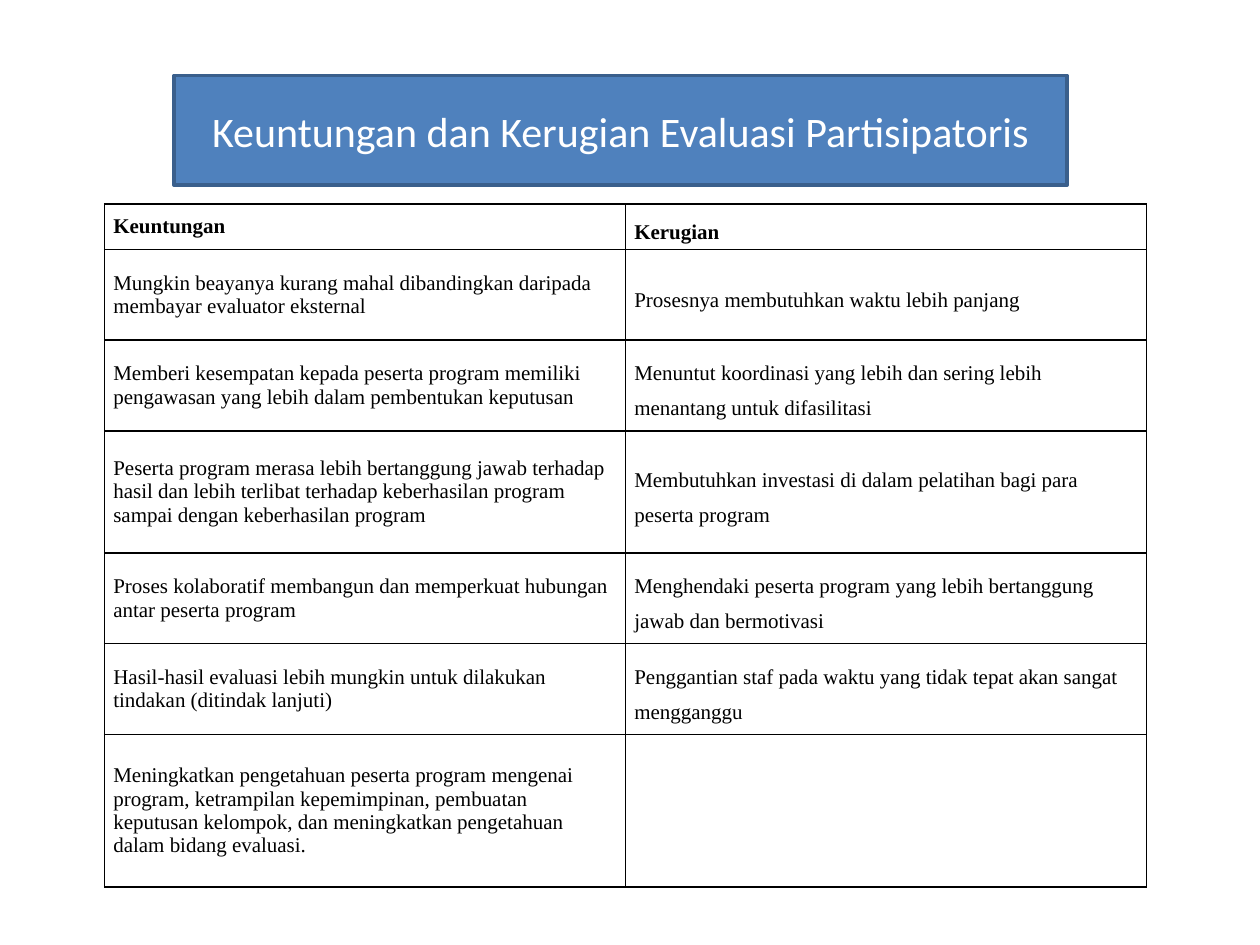
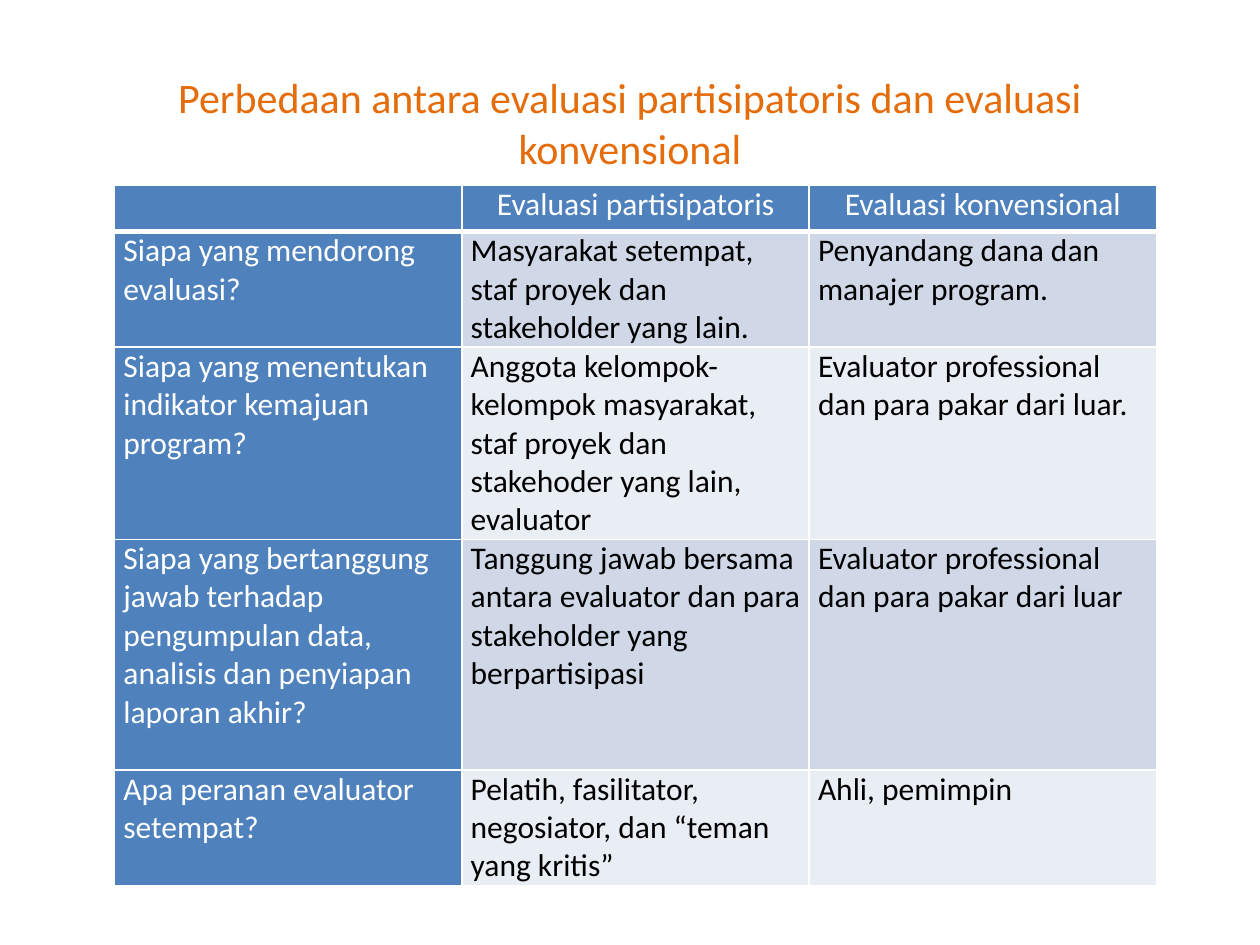
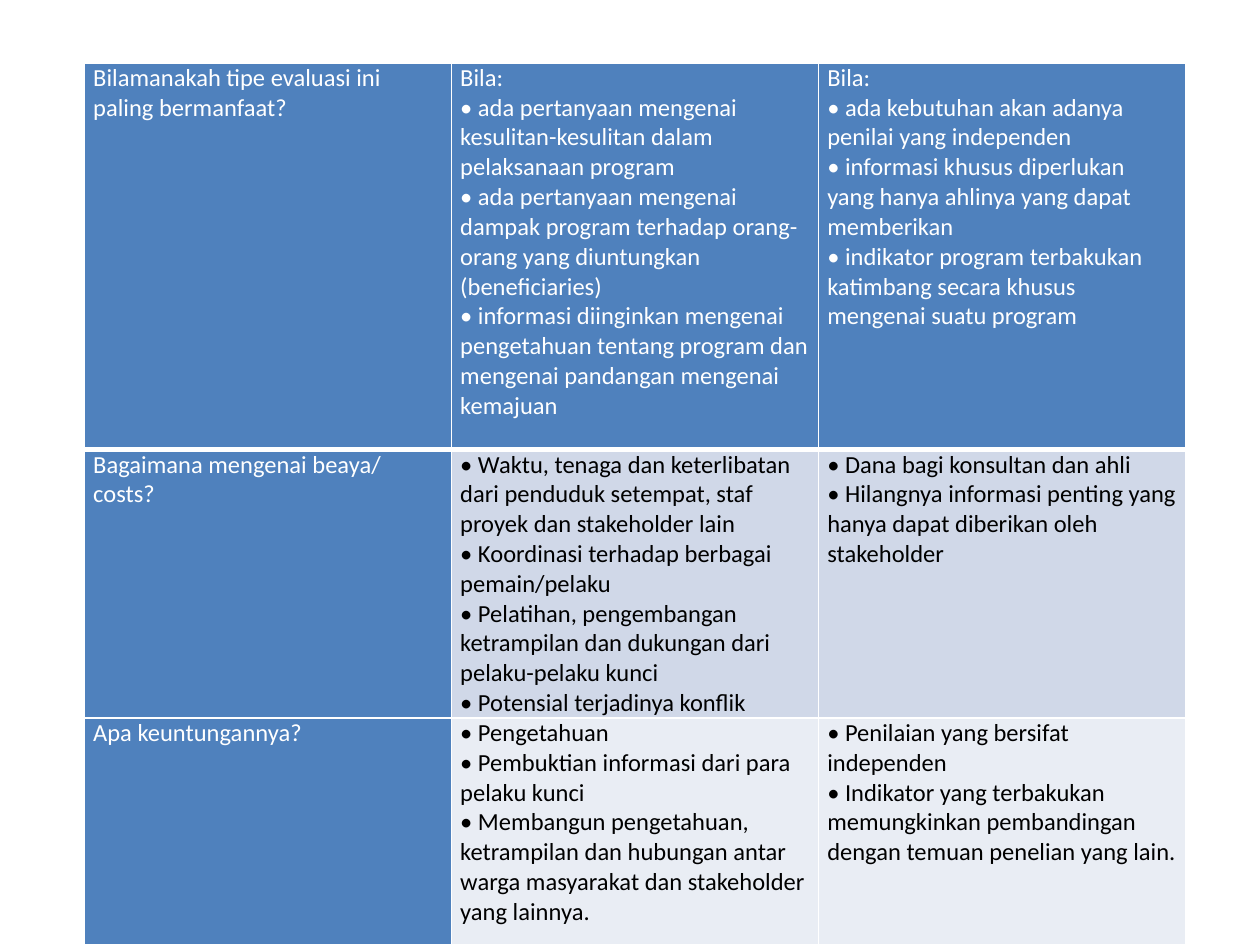
"""Build three slides that compare participatory and conventional evaluation."""
from dataclasses import dataclass

from lxml import etree
from pptx import Presentation
from pptx.dml.color import RGBColor
from pptx.enum.text import MSO_ANCHOR, MSO_AUTO_SIZE, PP_ALIGN
from pptx.oxml.ns import qn
from pptx.util import Inches, Pt

LEFT, CENTER, JUSTIFY = PP_ALIGN.LEFT, PP_ALIGN.CENTER, PP_ALIGN.JUSTIFY
TOP, MIDDLE = MSO_ANCHOR.TOP, MSO_ANCHOR.MIDDLE
NO_FIT = MSO_AUTO_SIZE.NONE
TITLE_ONLY, BLANK = 5, 6


@dataclass(frozen=True)
class Theme:
    """Colours, fonts and sizes shared by the slides."""
    blue: str = "4F81BD"
    blue_edge: str = "3A5F8C"
    orange: str = "E46C0A"
    white: str = "FFFFFF"
    black: str = "000000"
    bands: tuple = ("D0D8E8", "E9EDF4")
    sans: str = "Calibri"
    serif: str = "Times New Roman"
    title_size: int = 24
    list_size: int = 12
    matrix_size: int = 18
    detail_size: int = 14
    thin: int = 1
    thick: int = 3
    cell_margin: float = 0.07


class Deck:
    """Hold the style and the current slide."""

    def __init__(self, theme):
        self.theme = theme
        self.show = Presentation()
        self.show.slide_width, self.show.slide_height = Inches(10), Inches(7.5)
        self.page = None

    def add_page(self, layout):
        """Start a new slide."""
        self.page = self.show.slides.add_slide(self.show.slide_layouts[layout])

    def add_text(self, frame, text, font, size, color, align=LEFT, bold=False, spacing=1.0):
        """Add one paragraph for each line of text."""
        for number, line in enumerate(text.splitlines()):
            para = frame.add_paragraph() if number else frame.paragraphs[0]
            para.alignment, para.line_spacing = align, spacing
            span = para.add_run()
            span.text = line
            span.font.name, span.font.size, span.font.bold = font, Pt(size), bold
            span.font.color.rgb = RGBColor.from_string(color)

    def title(self, text, place, color, anchor, fill=None):
        """Move and format the title, with a filled box if asked."""
        box = self.page.shapes.title
        box.left, box.top, box.width, box.height = map(Inches, place)
        if fill:
            box.fill.solid()
            box.fill.fore_color.rgb = RGBColor.from_string(fill)
            box.line.color.rgb = RGBColor.from_string(self.theme.blue_edge)
            box.line.width = Pt(2)
        frame = box.text_frame
        frame.word_wrap, frame.auto_size, frame.vertical_anchor = True, NO_FIT, anchor
        self.add_text(frame, text, self.theme.sans, self.theme.title_size, color, CENTER)

    def border(self, cell, color, bottom):
        """Draw the four sides of a cell."""
        sides = {"L": self.theme.thin, "R": self.theme.thin, "T": self.theme.thin, "B": bottom}
        for side, weight in sides.items():
            line = etree.SubElement(cell._tc.get_or_add_tcPr(), qn(f"a:ln{side}"), w=str(Pt(weight)))
            fill = etree.SubElement(line, qn("a:solidFill"))
            etree.SubElement(fill, qn("a:srgbClr"), val=color)

    def grid(self, left, top, width, heights, rows):
        """Add a table with equal columns and yield its cells with their text."""
        columns = len(rows[0])
        table = self.page.shapes.add_table(
            len(rows), columns, Inches(left), Inches(top),
            Inches(width), Inches(sum(heights))).table
        for row, height in zip(table.rows, heights):
            row.height = Inches(height)
        for r, texts in enumerate(rows):
            for c, text in enumerate(texts):
                cell = table.cell(r, c)
                cell.margin_left = cell.margin_right = Inches(self.theme.cell_margin)
                cell.margin_top = cell.margin_bottom = 0
                yield r, c, cell, text

    def plain_table(self, left, top, width, heights, rows):
        """Add a ruled table without fills."""
        theme = self.theme
        for r, c, cell, text in self.grid(left, top, width, heights, rows):
            self.border(cell, theme.black, theme.thin)
            cell.fill.background()
            cell.vertical_anchor = MIDDLE
            self.add_text(cell.text_frame, text, theme.serif, theme.list_size, theme.black,
                          LEFT if r else JUSTIFY, r == 0, 1.5 if c else 1.0)

    def banded_table(self, left, top, width, heights, rows, size, head_align):
        """Add a table with a blue first row and column and banded answers."""
        theme = self.theme
        for r, c, cell, text in self.grid(left, top, width, heights, rows):
            heading = r == 0 or c == 0
            self.border(cell, theme.white, theme.thin if r else theme.thick)
            cell.fill.solid()
            fill = theme.blue if heading else theme.bands[(r - 1) % 2]
            cell.fill.fore_color.rgb = RGBColor.from_string(fill)
            cell.vertical_anchor = TOP
            self.add_text(cell.text_frame, text, theme.sans, size,
                          theme.white if heading else theme.black, LEFT if r else head_align)


PROS_AND_CONS = [
    ("Keuntungan", "Kerugian"),
    ("Mungkin beayanya kurang mahal dibandingkan daripada membayar evaluator eksternal",
     "Prosesnya membutuhkan waktu lebih panjang"),
    ("Memberi kesempatan kepada peserta program memiliki pengawasan yang lebih dalam "
     "pembentukan keputusan",
     "Menuntut koordinasi yang lebih dan sering lebih menantang untuk difasilitasi"),
    ("Peserta program merasa lebih bertanggung jawab terhadap hasil dan lebih terlibat "
     "terhadap keberhasilan program sampai dengan keberhasilan program",
     "Membutuhkan investasi di dalam pelatihan bagi para peserta program"),
    ("Proses kolaboratif membangun dan memperkuat hubungan antar peserta program",
     "Menghendaki peserta program yang lebih bertanggung jawab dan bermotivasi"),
    ("Hasil-hasil evaluasi lebih mungkin untuk dilakukan tindakan (ditindak lanjuti)",
     "Penggantian staf pada waktu yang tidak tepat akan sangat mengganggu"),
    ("Meningkatkan pengetahuan peserta program mengenai program, ketrampilan kepemimpinan, "
     "pembuatan keputusan kelompok, dan meningkatkan pengetahuan dalam bidang evaluasi.", ""),
]

DIFFERENCES = [
    ("", "Evaluasi partisipatoris", "Evaluasi konvensional"),
    ("Siapa yang mendorong evaluasi?",
     "Masyarakat setempat, staf proyek dan stakeholder yang lain.",
     "Penyandang dana dan manajer program."),
    ("Siapa yang menentukan indikator kemajuan program?",
     "Anggota kelompok-kelompok masyarakat, staf proyek dan stakehoder yang lain, evaluator",
     "Evaluator professional dan para pakar dari luar."),
    ("Siapa yang bertanggung jawab terhadap pengumpulan data, analisis dan penyiapan "
     "laporan akhir?",
     "Tanggung jawab bersama antara evaluator dan para stakeholder yang berpartisipasi",
     "Evaluator professional dan para pakar dari luar"),
    ("Apa peranan evaluator setempat?",
     "Pelatih, fasilitator, negosiator, dan “teman yang kritis”",
     "Ahli, pemimpin"),
]

USES_AND_COSTS = [
    ("Bilamanakah tipe evaluasi ini paling bermanfaat?",
     "Bila:\n"
     "• ada pertanyaan mengenai kesulitan-kesulitan dalam pelaksanaan program\n"
     "• ada pertanyaan mengenai dampak program terhadap orang-orang yang diuntungkan "
     "(beneficiaries)\n"
     "• informasi diinginkan mengenai pengetahuan tentang program dan mengenai pandangan "
     "mengenai kemajuan",
     "Bila:\n"
     "• ada kebutuhan akan adanya penilai yang independen\n"
     "• informasi khusus diperlukan yang hanya ahlinya yang dapat memberikan\n"
     "• indikator program terbakukan katimbang secara khusus mengenai suatu program"),
    ("Bagaimana mengenai beaya/ costs?",
     "• Waktu, tenaga dan keterlibatan dari penduduk setempat, staf proyek dan "
     "stakeholder lain\n"
     "• Koordinasi terhadap berbagai pemain/pelaku\n"
     "• Pelatihan, pengembangan ketrampilan dan dukungan dari pelaku-pelaku kunci\n"
     "• Potensial terjadinya konflik",
     "• Dana bagi konsultan dan ahli\n"
     "• Hilangnya informasi penting yang hanya dapat diberikan oleh stakeholder"),
    ("Apa keuntungannya?",
     "• Pengetahuan\n"
     "• Pembuktian informasi dari para pelaku kunci\n"
     "• Membangun pengetahuan, ketrampilan dan hubungan antar warga masyarakat dan "
     "stakeholder yang lainnya.",
     "• Penilaian yang bersifat independen\n"
     "• Indikator yang terbakukan memungkinkan pembandingan dengan temuan penelian "
     "yang lain."),
]


def main():
    """Build the slides and save them."""
    theme = Theme()
    deck = Deck(theme)

    deck.add_page(TITLE_ONLY)
    deck.title("Keuntungan dan Kerugian Evaluasi Partisipatoris",
               (1.38, 0.6, 7.09, 0.87), theme.white, MIDDLE, theme.blue)
    deck.plain_table(0.83, 1.62, 8.27, (0.36, 0.72, 0.72, 0.97, 0.72, 0.72, 1.21),
                     PROS_AND_CONS)

    deck.add_page(TITLE_ONLY)
    deck.title("Perbedaan antara evaluasi partisipatoris dan evaluasi konvensional",
               (0.5, 0.52, 9, 0.95), theme.orange, TOP)
    deck.banded_table(0.91, 1.47, 8.27, (0.37, 0.91, 1.52, 1.83, 0.91),
                      DIFFERENCES, theme.matrix_size, CENTER)

    deck.add_page(BLANK)
    deck.banded_table(0.67, 0.5, 8.74, (3.07, 2.13, 1.8),
                      USES_AND_COSTS, theme.detail_size, LEFT)

    deck.show.save("out.pptx")


if __name__ == "__main__":
    main()
